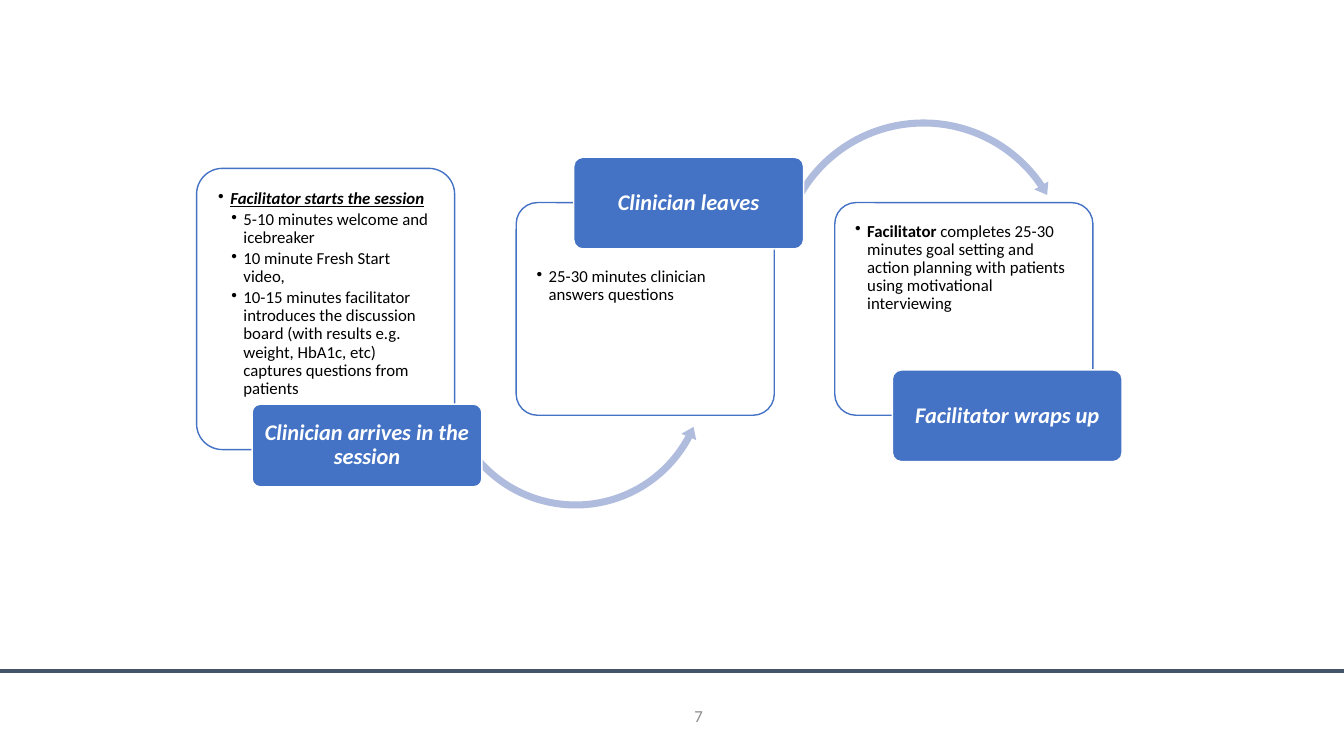
from lxml import etree
from pptx import Presentation
from pptx.dml.color import RGBColor
from pptx.enum.shapes import MSO_CONNECTOR, MSO_SHAPE
from pptx.enum.text import MSO_ANCHOR, PP_ALIGN
from pptx.oxml.ns import qn
from pptx.util import Inches, Pt

BLUE = RGBColor(0x44, 0x72, 0xC4)
PALE_BLUE = RGBColor(0xB0, 0xBC, 0xDE)
SLATE = RGBColor(0x44, 0x54, 0x6A)
GRAY = RGBColor(0x8C, 0x8C, 0x8C)
BLACK = RGBColor(0, 0, 0)
WHITE = RGBColor(0xFF, 0xFF, 0xFF)

CARD_WIDTH, LABEL_WIDTH = 2.56, 2.28
BULLET_INDENT = 0.12
LEVEL_MARGINS = [0.12, 0.25]

# Each bullet is a level and its runs; each run is a text and its format
STAGES = [
    dict(card=(1.95, 1.67, CARD_WIDTH, 2.79), label=(2.5, 4.01, LABEL_WIDTH, 0.82),
         title="Clinician arrives in the session",
         bullets=[
             (0, [("Facilitator starts the session",
                   dict(bold=True, italic=True, underline=True))]),
             (1, [("5-10 minutes welcome and icebreaker", {})]),
             (1, [("10 minute Fresh Start video,", {})]),
             (1, [("10-15 minutes facilitator introduces the discussion board "
                   "(with results e.g. weight, HbA1c, etc) captures questions "
                   "from patients", {})]),
         ],
         arrow=dict(kind=MSO_SHAPE.LEFT_CIRCULAR_ARROW, box=(4.36, 2.39, 2.7, 2.7),
                    head_sweep=4.98, head=27.95, tail=143.79)),
    dict(card=(5.12, 2.01, CARD_WIDTH, 2.11), label=(5.69, 1.56, LABEL_WIDTH, 0.91),
         title="Clinician leaves", text_drop=0.45,
         bullets=[(0, [("25-30 minutes clinician answers questions", {})])],
         arrow=dict(kind=MSO_SHAPE.CIRCULAR_ARROW, box=(7.67, 1.14, 2.98, 2.98),
                    head_sweep=4.48, head=325.93, tail=209.59)),
    dict(card=(8.28, 2.01, CARD_WIDTH, 2.11), label=(8.85, 3.67, LABEL_WIDTH, 0.91),
         title="Facilitator wraps up",
         bullets=[(0, [("Facilitator ", dict(bold=True)),
                       ("completes 25-30 minutes goal setting and action planning "
                        "with patients using motivational interviewing", {})])]),
]


def add_run(paragraph, text, size=12, color=BLACK, bold=False, italic=False,
            underline=False):
    run = paragraph.add_run()
    run.text = text
    font = run.font
    font.name, font.size, font.color.rgb = "Calibri", Pt(size), color
    font.bold, font.italic, font.underline = bold, italic, underline


def set_frame(shape, anchor, left, top, right, bottom):
    frame = shape.text_frame
    frame.word_wrap = True
    frame.vertical_anchor = anchor
    frame.margin_left, frame.margin_top = Inches(left), Inches(top)
    frame.margin_right, frame.margin_bottom = Inches(right), Inches(bottom)
    return frame


def add_outline(slide, kind, box, fill, line=None):
    shape = slide.shapes.add_shape(kind, *map(Inches, box))
    shape.shadow.inherit = False
    shape.fill.solid()
    shape.fill.fore_color.rgb = fill
    if line is None:
        shape.line.fill.background()
    else:
        shape.line.color.rgb = line
        shape.line.width = Pt(1)
    return shape


def add_rounded(slide, box, fill, line):
    shape = add_outline(slide, MSO_SHAPE.ROUNDED_RECTANGLE, box, fill, line)
    shape.adjustments[0] = 0.1
    return shape


def set_bullet(paragraph, level):
    properties = paragraph._p.get_or_add_pPr()
    properties.set("marL", str(Inches(LEVEL_MARGINS[level])))
    properties.set("indent", str(-Inches(BULLET_INDENT)))
    etree.SubElement(properties, qn("a:buChar")).set("char", "•")


def add_card(slide, box, bullets, text_drop=0):
    card = add_rounded(slide, box, WHITE, BLUE)
    frame = set_frame(card, MSO_ANCHOR.TOP, 0.14, 0.14 + text_drop, 0.14, 0.14)
    for index, (level, runs) in enumerate(bullets):
        paragraph = frame.add_paragraph() if index else frame.paragraphs[0]
        paragraph.level = level
        paragraph.alignment = PP_ALIGN.LEFT
        paragraph.line_spacing = 0.9
        paragraph.space_after = Pt(2)
        set_bullet(paragraph, level)
        for text, style in runs:
            add_run(paragraph, text, **style)


def add_label(slide, box, title):
    label = add_rounded(slide, box, BLUE, WHITE)
    frame = set_frame(label, MSO_ANCHOR.MIDDLE, 0.03, 0.02, 0.03, 0.02)
    paragraph = frame.paragraphs[0]
    paragraph.alignment = PP_ALIGN.CENTER
    paragraph.line_spacing = 0.9
    add_run(paragraph, title, size=16, color=WHITE, bold=True, italic=True)


def add_arc_arrow(slide, kind, box, head_sweep, head, tail):
    arrow = add_outline(slide, kind, box, PALE_BLUE)
    size = box[2]
    # Angles are stored in 60000ths of a degree, adjustments in 100000ths
    angles = [angle * 0.6 for angle in (head_sweep, head, tail)]
    for index, value in enumerate([0.07 / size, *angles, 0.08 / size]):
        arrow.adjustments[index] = value


def add_stage(slide, card, label, title, bullets, text_drop=0, arrow=None):
    add_card(slide, card, bullets, text_drop)
    if arrow:
        add_arc_arrow(slide, **arrow)
    add_label(slide, label, title)


def add_footer(slide, top, width):
    # Rule across the slide
    rule = slide.shapes.add_connector(MSO_CONNECTOR.STRAIGHT, 0, Inches(top),
                                      Inches(width), Inches(top))
    rule.line.color.rgb = SLATE
    rule.line.width = Pt(3)
    etree.SubElement(rule._element.spPr, qn("a:effectLst"))
    # Page number
    number = slide.shapes.add_textbox(Inches(6.63), Inches(top + 0.24),
                                      Inches(0.44), Inches(0.4))
    frame = set_frame(number, MSO_ANCHOR.MIDDLE, 0.1, 0.05, 0.1, 0.05)
    frame.paragraphs[0].alignment = PP_ALIGN.RIGHT
    add_run(frame.paragraphs[0], "7", color=GRAY)


def main():
    deck = Presentation()
    deck.slide_width, deck.slide_height = Inches(13.33), Inches(7.5)
    slide = deck.slides.add_slide(deck.slide_layouts[6])
    add_footer(slide, 6.66, 13.33)
    for stage in STAGES:
        add_stage(slide, **stage)
    deck.save("out.pptx")


if __name__ == "__main__":
    main()
